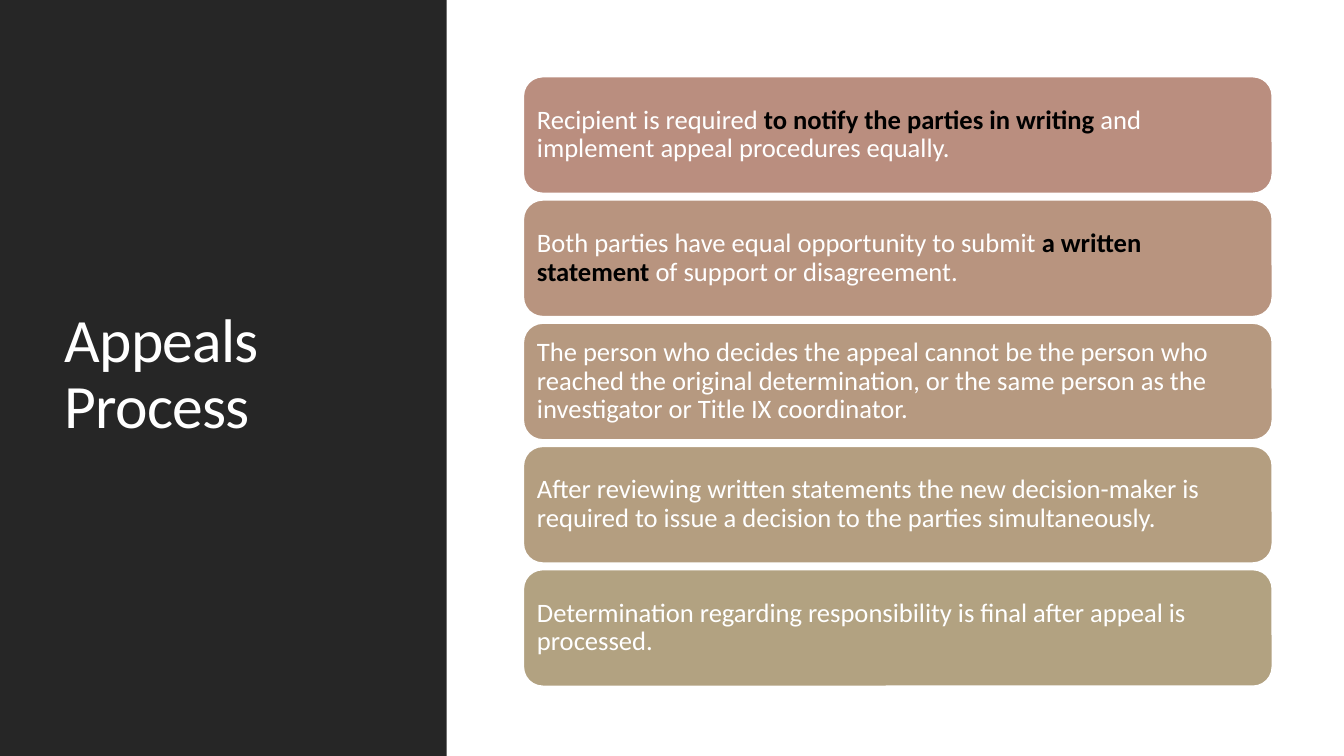
from pptx import Presentation
from pptx.dml.color import RGBColor
from pptx.enum.shapes import MSO_SHAPE
from pptx.enum.text import MSO_ANCHOR, PP_ALIGN
from pptx.util import Inches, Pt

RECT, ROUNDED = MSO_SHAPE.RECTANGLE, MSO_SHAPE.ROUNDED_RECTANGLE
MIDDLE, LEFT = MSO_ANCHOR.MIDDLE, PP_ALIGN.LEFT

FONT = "Calibri"
WHITE, BLACK, DARK = "FFFFFF", "000000", "262626"

# Each step: fill and its text pieces; every second piece is emphasised
STEPS = [
    ("BA8E7F", ["Recipient is required ", "to notify the parties in writing ",
                "and implement appeal procedures equally."]),
    ("B8947F", ["Both parties have equal opportunity to submit ", "a written statement ",
                "of support or disagreement."]),
    ("B69980", ["The person who decides the appeal cannot be the person who reached the "
                "original determination, or the same person as the investigator or "
                "Title IX coordinator."]),
    ("B49E80", ["After reviewing written statements the new decision-maker is required "
                "to issue a decision to the parties simultaneously."]),
    ("B2A281", ["Determination regarding responsibility is final after appeal is processed."]),
]
STEP_TOP, STEP_PITCH = 0.76, 1.2225


def rgb(color):
    return RGBColor.from_string(color)


def add_run(p, text, size, color, bold=False):
    r = p.add_run()
    r.text = text
    r.font.name = FONT
    r.font.size = Pt(size)
    r.font.bold = bold
    r.font.color.rgb = rgb(color)
    return r


prs = Presentation()
prs.slide_width, prs.slide_height = Inches(13.33), Inches(7.5)
s = prs.slides.add_slide(prs.slide_layouts[6])

# Dark side panel
sp = s.shapes.add_shape(RECT, 0, 0, Inches(4.43), prs.slide_height)
sp.shadow.inherit = False
sp.fill.solid()
sp.fill.fore_color.rgb = rgb(DARK)
sp.line.fill.background()

# Title
tf = s.shapes.add_textbox(Inches(0.54), Inches(0.57), Inches(3.37), Inches(6.31)).text_frame
tf.word_wrap = True
tf.vertical_anchor = MIDDLE
p = tf.paragraphs[0]
p.line_spacing = 0.9
r = add_run(p, "Appeals Process", 44, WHITE)
r._r.get_or_add_rPr().set("spc", "-50")

# Stack of appeal steps
for i, (fill, pieces) in enumerate(STEPS):
    sp = s.shapes.add_shape(ROUNDED, Inches(5.19), Inches(STEP_TOP + i * STEP_PITCH),
                            Inches(7.43), Inches(1.16))
    sp.shadow.inherit = False
    sp.fill.solid()
    sp.fill.fore_color.rgb = rgb(fill)
    sp.line.color.rgb = rgb(WHITE)
    sp.line.width = Pt(1.25)
    tf = sp.text_frame
    tf.word_wrap = True
    tf.vertical_anchor = MIDDLE
    tf.margin_left = tf.margin_right = Inches(0.08)
    tf.margin_top = tf.margin_bottom = Inches(0.08)
    p = tf.paragraphs[0]
    p.alignment = LEFT
    p.line_spacing = 0.9
    for j, piece in enumerate(pieces):
        strong = j % 2 == 1
        add_run(p, piece, 19, BLACK if strong else WHITE, strong)

prs.save("out.pptx")
